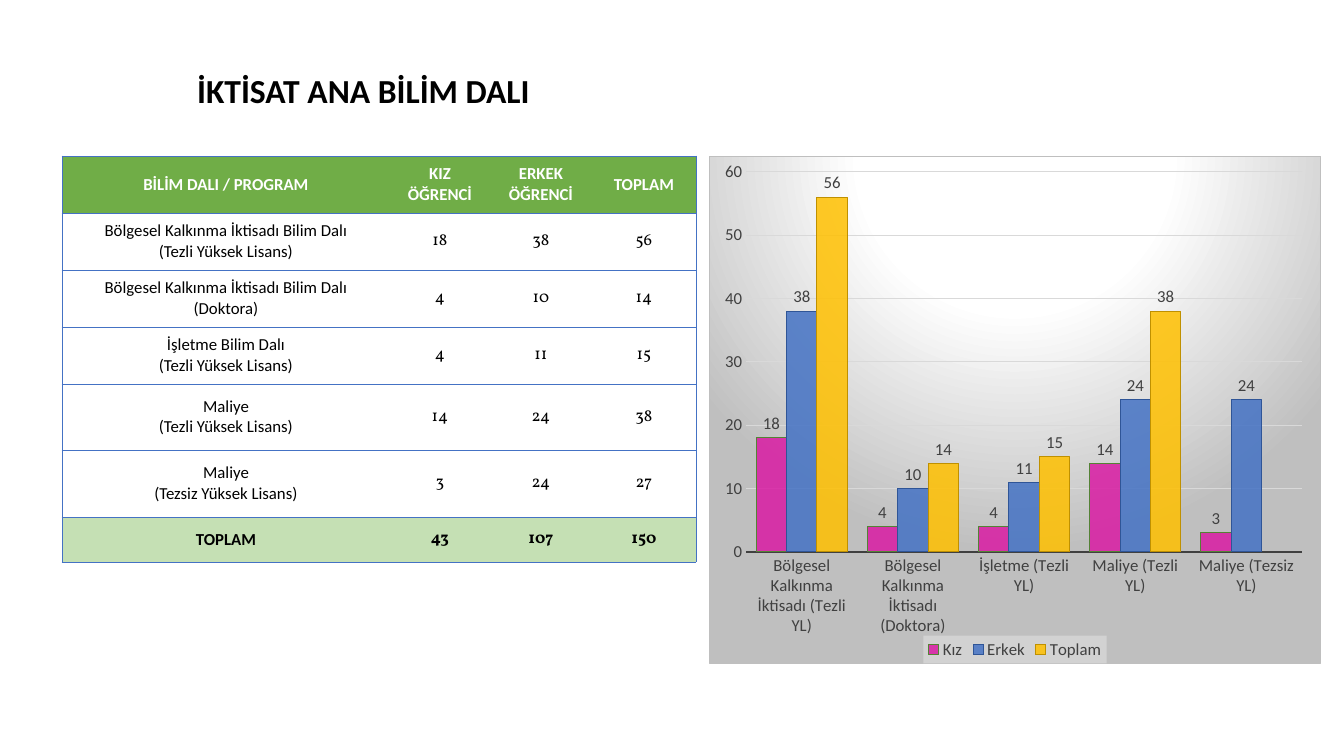
from lxml import etree
from pptx import Presentation
from pptx.chart.data import CategoryChartData
from pptx.dml.color import RGBColor
from pptx.enum.chart import XL_CHART_TYPE as ChartType
from pptx.enum.chart import XL_LABEL_POSITION as LabelPos
from pptx.enum.chart import XL_LEGEND_POSITION as LegendPos
from pptx.enum.chart import XL_TICK_MARK as TickMark
from pptx.enum.text import MSO_ANCHOR, MSO_AUTO_SIZE, PP_ALIGN
from pptx.oxml import parse_xml
from pptx.oxml.ns import nsdecls, qn
from pptx.util import Emu, Pt

SLIDE_W, SLIDE_H = 1344, 756
EMU_PER_PX = 12192000 / SLIDE_W

BLACK = RGBColor(0x00, 0x00, 0x00)
WHITE = RGBColor(0xFF, 0xFF, 0xFF)
BLUE = RGBColor(0x44, 0x72, 0xC4)
HEADER_GREEN = RGBColor(0x70, 0xAD, 0x47)
TOTAL_GREEN = RGBColor(0xC5, 0xE0, 0xB4)
PINK = RGBColor(0xD9, 0x1B, 0xA3)
GOLD = RGBColor(0xFF, 0xC0, 0x00)
DARK_GREEN = RGBColor(0x54, 0x82, 0x35)
DARK_BLUE = RGBColor(0x2F, 0x55, 0x97)
DARK_GOLD = RGBColor(0xBF, 0x90, 0x00)
CHART_TEXT = RGBColor(0x40, 0x40, 0x40)
GRID_GREY = RGBColor(0xD9, 0xD9, 0xD9)
EDGE_GREY = RGBColor(0xBF, 0xBF, 0xBF)
LEGEND_GREY = RGBColor(0xF2, 0xF2, 0xF2)

TEXT_FONT, NUMBER_FONT = "Calibri", "Vollkorn"
NO_GRID_STYLE = "{2D5ABB26-0587-4C30-8999-92F81FD0307C}"

HEADINGS = ("BİLİM DALI / PROGRAM", "KIZ ÖĞRENCİ", "ERKEK ÖĞRENCİ", "TOPLAM")
PROGRAMS = (
    ("Bölgesel Kalkınma İktisadı Bilim Dalı\n(Tezli Yüksek Lisans)", 18, 38, 56),
    ("Bölgesel Kalkınma İktisadı Bilim Dalı\n(Doktora)", 4, 10, 14),
    ("İşletme Bilim Dalı\n(Tezli Yüksek Lisans)", 4, 11, 15),
    ("Maliye\n(Tezli Yüksek Lisans)", 14, 24, 38),
    ("Maliye\n(Tezsiz Yüksek Lisans)", 3, 24, 27),
)
TOTALS = ("TOPLAM", 43, 107, 150)
COLUMN_WIDTHS = (328, 100, 102, 104)
ROW_HEIGHTS = (57, 57, 57, 57, 66, 67, 45)

CATEGORIES = (
    "Bölgesel Kalkınma İktisadı (Tezli YL)",
    "Bölgesel Kalkınma İktisadı (Doktora)",
    "İşletme (Tezli YL)",
    "Maliye (Tezli YL)",
    "Maliye (Tezsiz YL)",
)
SERIES = (
    ("Kız", (18, 4, 4, 14, 3), PINK, DARK_GREEN),
    ("Erkek", (38, 10, 11, 24, 24), BLUE, DARK_BLUE),
    ("Toplam", (56, 14, 15, 38, None), GOLD, DARK_GOLD),
)


def px(length):
    return Emu(round(length * EMU_PER_PX))


def style_font(font, size, color, bold=False, name=TEXT_FONT):
    font.name, font.size, font.bold = name, Pt(size), bold
    font.color.rgb = color


def add_title(slide, left, top, width, height):
    title = slide.shapes.title
    title.left, title.top, title.width, title.height = map(px, (left, top, width, height))
    frame = title.text_frame
    frame.text = "İKTİSAT ANA BİLİM DALI"
    frame.word_wrap = True
    frame.auto_size = MSO_AUTO_SIZE.SHAPE_TO_FIT_TEXT
    frame.vertical_anchor = MSO_ANCHOR.TOP
    heading = frame.paragraphs[0]
    heading.alignment = PP_ALIGN.LEFT
    style_font(heading.runs[0].font, 24, BLACK, bold=True)


# Student table
def add_border(cell, side):
    line = etree.SubElement(cell._tc.get_or_add_tcPr(), qn(f"a:ln{side}"), w=str(Pt(0.5)))
    fill = etree.SubElement(line, qn("a:solidFill"))
    etree.SubElement(fill, qn("a:srgbClr"), val=str(BLUE))


def fill_cell(cell, value, sides, fill, color, bold):
    cell.text = str(value)
    cell.vertical_anchor = MSO_ANCHOR.MIDDLE
    cell.margin_left = cell.margin_right = px(15)
    cell.margin_top = cell.margin_bottom = px(5)
    font_name = NUMBER_FONT if isinstance(value, int) else TEXT_FONT
    for paragraph in cell.text_frame.paragraphs:
        paragraph.alignment = PP_ALIGN.CENTER
        for run in paragraph.runs:
            style_font(run.font, 12, color, bold, font_name)
    for side in sides:
        add_border(cell, side)
    if fill is None:
        cell.fill.background()
    else:
        cell.fill.solid()
        cell.fill.fore_color.rgb = fill


def add_student_table(slide, left, top):
    records = (HEADINGS, *PROGRAMS, TOTALS)
    frame = slide.shapes.add_table(
        len(records), len(HEADINGS), px(left), px(top),
        px(sum(COLUMN_WIDTHS)), px(sum(ROW_HEIGHTS)))
    students = frame.table
    next(frame._element.iter(qn("a:tableStyleId"))).text = NO_GRID_STYLE
    students.horz_banding = False
    for column, width in zip(students.columns, COLUMN_WIDTHS):
        column.width = px(width)
    for row, height in zip(students.rows, ROW_HEIGHTS):
        row.height = px(height)

    last_row, last_col = len(records) - 1, len(HEADINGS) - 1
    row_styles = {0: (HEADER_GREEN, WHITE, True), last_row: (TOTAL_GREEN, BLACK, True)}
    for r, record in enumerate(records):
        fill, color, bold = row_styles.get(r, (None, BLACK, False))
        for c, value in enumerate(record):
            sides = ("L" if c == 0 else "") + ("R" if c == last_col else "") + "TB"
            fill_cell(students.cell(r, c), value, sides, fill, color, bold)


# Student chart
def style_axis(axis):
    axis.major_tick_mark = axis.minor_tick_mark = TickMark.NONE
    style_font(axis.tick_labels.font, 12, CHART_TEXT)


def style_series(series, fill, outline):
    series.format.fill.solid()
    series.format.fill.fore_color.rgb = fill
    fill_color = next(series._element.iter(qn("a:srgbClr")))
    etree.SubElement(fill_color, qn("a:alpha"), val="85000")
    series.format.line.color.rgb = outline
    series.format.line.width = Pt(0.75)
    labels = series.data_labels
    labels.show_value = True
    labels.position = LabelPos.OUTSIDE_END
    style_font(labels.font, 12, CHART_TEXT)


def set_backgrounds(chart):
    stops = "".join(
        f'<a:gs pos="{pos}000"><a:srgbClr val="{color}"/></a:gs>'
        for pos, color in ((0, WHITE), (39, WHITE), (100, EDGE_GREY)))
    chart._chartSpace.find(qn("c:chart")).addnext(parse_xml(
        f'<c:spPr {nsdecls("c", "a")}><a:gradFill><a:gsLst>{stops}</a:gsLst>'
        '<a:path path="circle"><a:fillToRect l="50000" t="-80000" r="50000" b="180000"/>'
        f'</a:path></a:gradFill><a:ln w="{Pt(0.75)}"><a:solidFill>'
        f'<a:srgbClr val="{EDGE_GREY}"/></a:solidFill></a:ln></c:spPr>'))
    chart.legend._element.find(qn("c:overlay")).addnext(parse_xml(
        f'<c:spPr {nsdecls("c", "a")}><a:solidFill><a:srgbClr val="{LEGEND_GREY}">'
        '<a:alpha val="39000"/></a:srgbClr></a:solidFill></c:spPr>'))


def set_plot_layout(chart, x, y, w, h):
    plot_area = next(chart._chartSpace.iter(qn("c:plotArea")))
    for layout in plot_area.findall(qn("c:layout")):
        plot_area.remove(layout)
    settings = (("layoutTarget", "inner"), ("xMode", "edge"), ("yMode", "edge"),
                ("x", x), ("y", y), ("w", w), ("h", h))
    entries = "".join(f'<c:{tag} val="{value}"/>' for tag, value in settings)
    plot_area.insert(0, parse_xml(
        f'<c:layout {nsdecls("c")}><c:manualLayout>{entries}</c:manualLayout></c:layout>'))


def add_student_chart(slide, left, top, width, height):
    counts = CategoryChartData()
    counts.categories = CATEGORIES
    for name, values, _, _ in SERIES:
        counts.add_series(name, values)
    chart = slide.shapes.add_chart(
        ChartType.COLUMN_CLUSTERED, *map(px, (left, top, width, height)), counts).chart
    chart.has_title = False
    style_font(chart.font, 10, BLACK)

    columns = chart.plots[0]
    columns.gap_width, columns.overlap = 65, 0
    columns.vary_by_categories = False
    for series, (_, _, fill, outline) in zip(columns.series, SERIES):
        style_series(series, fill, outline)

    programs, students = chart.category_axis, chart.value_axis
    style_axis(programs)
    programs.format.line.color.rgb = CHART_TEXT
    programs.format.line.width = Pt(1.5)
    style_axis(students)
    students.minimum_scale, students.maximum_scale, students.major_unit = 0, 60, 10
    students.format.line.fill.background()
    students.major_gridlines.format.line.color.rgb = GRID_GREY
    students.major_gridlines.format.line.width = Pt(0.75)

    chart.has_legend = True
    chart.legend.position = LegendPos.BOTTOM
    chart.legend.include_in_layout = False
    style_font(chart.legend.font, 12, CHART_TEXT)
    set_backgrounds(chart)
    set_plot_layout(chart, 0.06, 0.03, 0.91, 0.75)


def main():
    deck = Presentation()
    deck.slide_width, deck.slide_height = px(SLIDE_W), px(SLIDE_H)
    slide = deck.slides.add_slide(deck.slide_layouts[5])
    add_title(slide, 187, 65, 746, 92)
    add_student_table(slide, 62, 156)
    add_student_chart(slide, 709, 156, 612, 508)
    deck.save("out.pptx")


if __name__ == "__main__":
    main()
